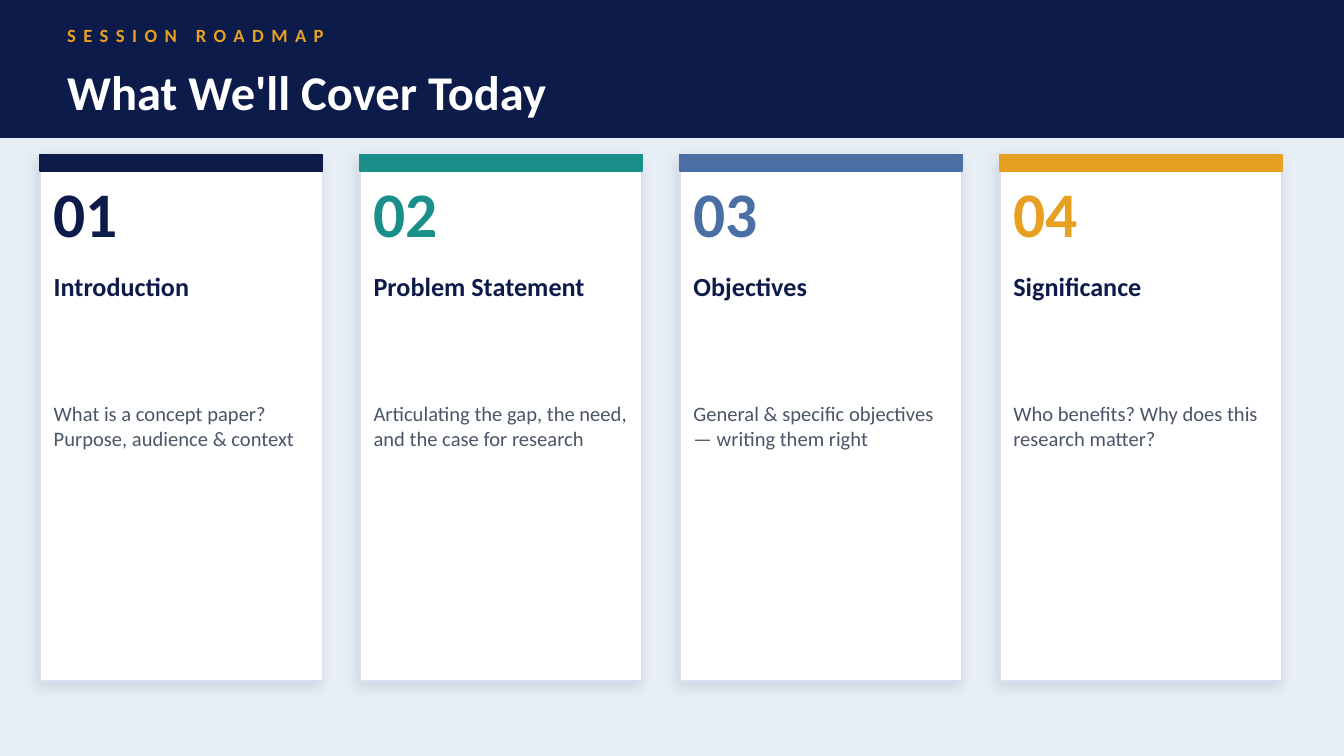
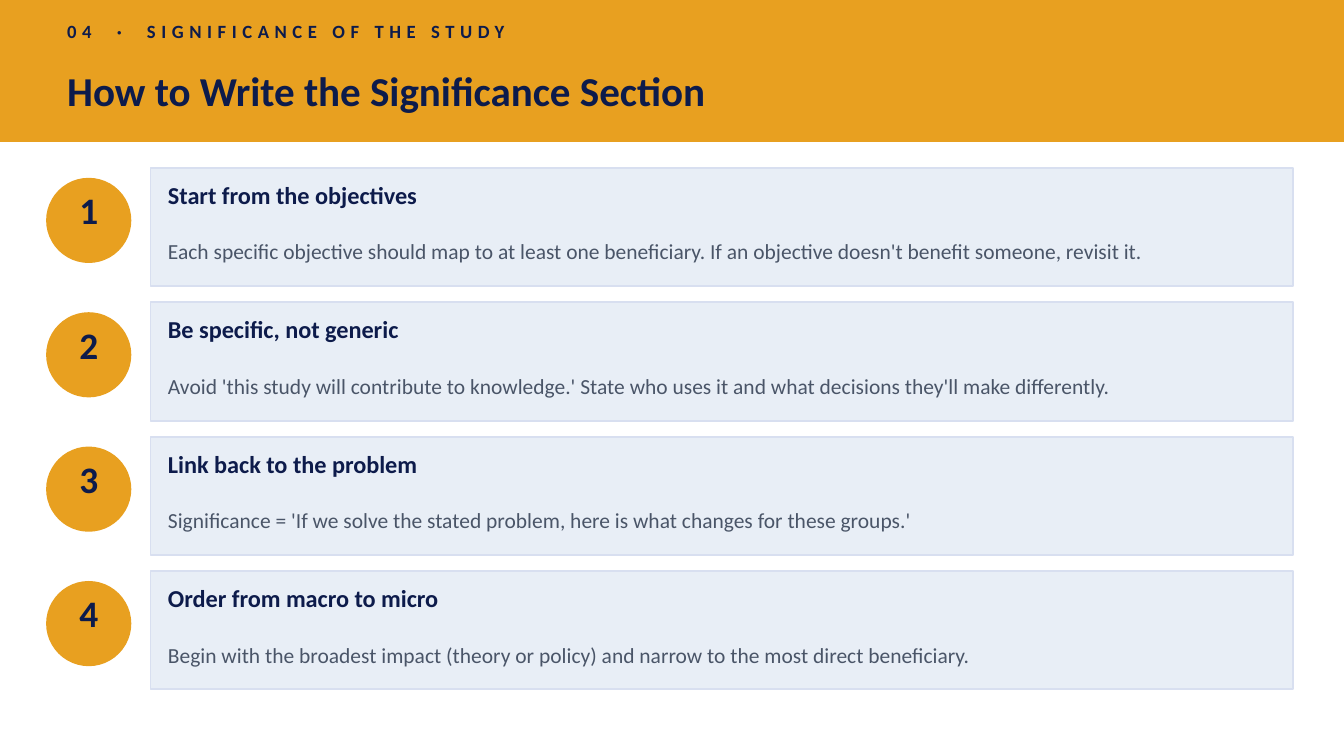
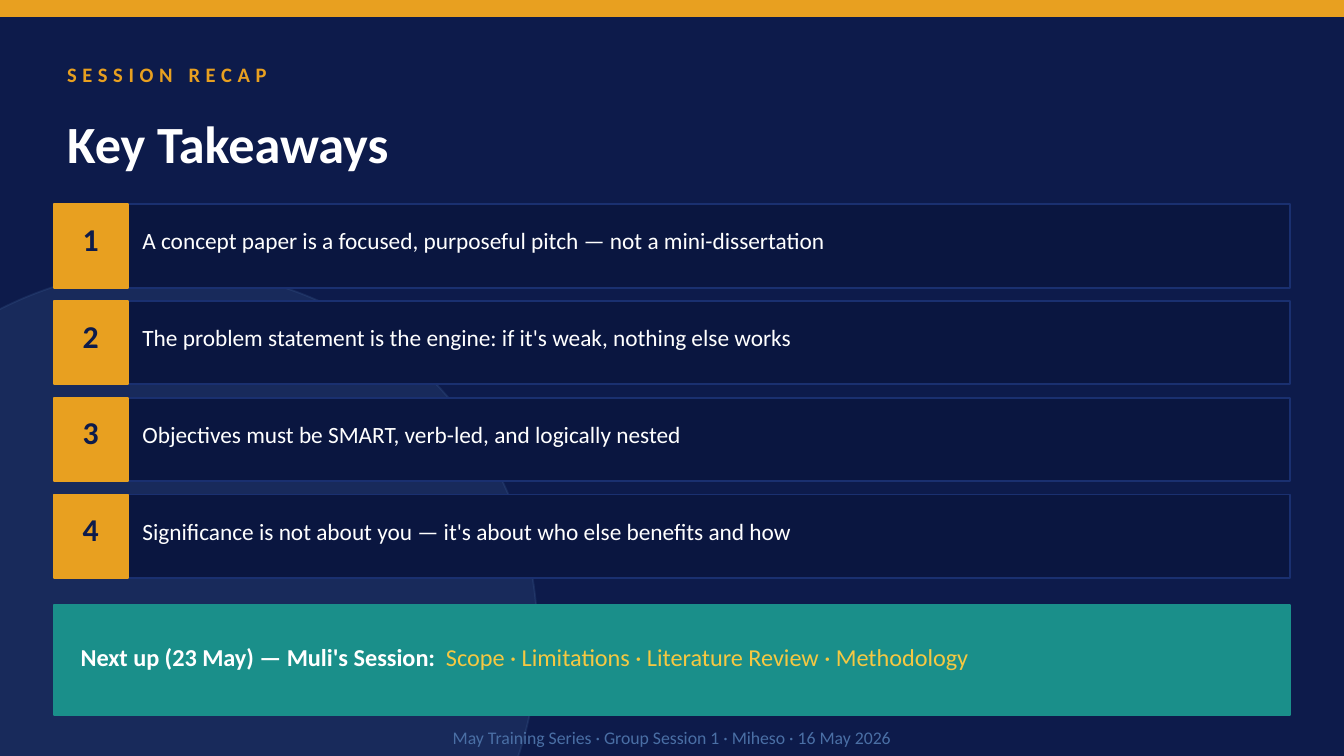
import pptx
import pptx.util
import pptx.dml.color
import pptx.enum.shapes
import pptx.enum.text
import pptx.oxml
import pptx.oxml.ns
import lxml.etree

RGB = pptx.dml.color.RGBColor
RECT = pptx.enum.shapes.MSO_SHAPE.RECTANGLE
OVAL = pptx.enum.shapes.MSO_SHAPE.OVAL
LEFT = pptx.enum.text.PP_ALIGN.LEFT
MID = pptx.enum.text.PP_ALIGN.CENTER

# Shared look
NAVY = RGB(0x0D, 0x1B, 0x4B)
DEEP = RGB(0x0A, 0x16, 0x40)
ROYAL = RGB(0x1A, 0x30, 0x70)
BLUE = RGB(0x4A, 0x6F, 0xA5)
TEAL = RGB(0x1A, 0x8F, 0x8A)
GOLD = RGB(0xE8, 0xA0, 0x20)
LEMON = RGB(0xF5, 0xC8, 0x42)
PALE = RGB(0xE8, 0xEE, 0xF6)
EDGE = RGB(0xD8, 0xDF, 0xF0)
GRAY = RGB(0x4A, 0x55, 0x68)
WHITE = RGB(0xFF, 0xFF, 0xFF)
FONT = "Calibri"
SCALE = 9144  # EMU per px, 100 px to the inch
WIDE = 1000

# Content
TOPICS = [
    ("Introduction", "What is a concept paper? Purpose, audience & context", NAVY),
    ("Problem Statement",
     "Articulating the gap, the need, and the case for research", TEAL),
    ("Objectives", "General & specific objectives — writing them right", BLUE),
    ("Significance", "Who benefits? Why does this research matter?", GOLD),
]
STEPS = [
    ("Start from the objectives",
     "Each specific objective should map to at least one beneficiary. "
     "If an objective doesn't benefit someone, revisit it."),
    ("Be specific, not generic",
     "Avoid 'this study will contribute to knowledge.' "
     "State who uses it and what decisions they'll make differently."),
    ("Link back to the problem",
     "Significance = 'If we solve the stated problem, "
     "here is what changes for these groups.'"),
    ("Order from macro to micro",
     "Begin with the broadest impact (theory or policy) "
     "and narrow to the most direct beneficiary."),
]
POINTS = [
    "A concept paper is a focused, purposeful pitch — not a mini-dissertation",
    "The problem statement is the engine: if it's weak, nothing else works",
    "Objectives must be SMART, verb-led, and logically nested",
    "Significance is not about you — it's about who else benefits and how",
]


def px(*nums):
    return [pptx.util.Emu(num * SCALE) for num in nums]


# Text
def write(shape, text, size, color, bold=False, align=LEFT, space=0):
    """Fill a shape with one paragraph; text is a string or (text, color, bold) runs."""
    frame = shape.text_frame
    frame.word_wrap = True
    frame.auto_size = pptx.enum.text.MSO_AUTO_SIZE.NONE
    frame.vertical_anchor = pptx.enum.text.MSO_ANCHOR.MIDDLE
    frame.margin_left = frame.margin_top = 0
    frame.margin_right = frame.margin_bottom = 0
    para = frame.paragraphs[0]
    para.alignment = align
    runs = [(text, color, bold)] if isinstance(text, str) else text
    for words, tint, heavy in runs:
        run = para.add_run()
        run.text = words
        run.font.name = FONT
        run.font.size = pptx.util.Pt(size)
        run.font.bold = heavy
        run.font.color.rgb = tint
        if space:
            run.font._element.set("spc", str(space * 100))


def label(slide, x, y, w, h, text, **form):
    write(slide.shapes.add_textbox(*px(x, y, w, h)), text, **form)


def title(slide, x, y, w, h, text, **form):
    head = slide.shapes.title
    head.left, head.top, head.width, head.height = px(x, y, w, h)
    write(head, text, bold=True, **form)
    # Bring the title in front of the band
    head.element.getparent().append(head.element)


# Shapes
def block(slide, x, y, w, h, fill, line=None, kind=RECT):
    shape = slide.shapes.add_shape(kind, *px(x, y, w, h))
    shape.shadow.inherit = False
    shape.fill.solid()
    shape.fill.fore_color.rgb = fill
    shape.line.color.rgb = line or fill
    shape.line.width = pptx.util.Pt(1)
    return shape


def fade(shape, part):
    """Set the opacity, in percent, of fill and line."""
    tag = pptx.oxml.ns.qn("a:alpha")
    for tint in list(shape.element.spPr.iter(pptx.oxml.ns.qn("a:srgbClr"))):
        lxml.etree.SubElement(tint, tag).set("val", str(part * 1000))


def shade(shape):
    """Add a soft outer shadow."""
    blur, dist = pptx.util.Pt(8), pptx.util.Pt(3)
    shape.element.spPr.find(pptx.oxml.ns.qn("a:effectLst")).append(
        pptx.oxml.parse_xml(
            f'<a:outerShdw {pptx.oxml.ns.nsdecls("a")} blurRad="{blur}" '
            f'dist="{dist}" dir="8100000" algn="bl" rotWithShape="0">'
            '<a:srgbClr val="000000"><a:alpha val="10000"/></a:srgbClr>'
            '</a:outerShdw>'))


# Elements
def start(deck, back):
    slide = deck.slides.add_slide(deck.slide_layouts.get_by_name("Title Only"))
    slide.background.fill.solid()
    slide.background.fill.fore_color.rgb = back
    return slide


def card(slide, x, num, name, note, color):
    shade(block(slide, x, 115, 210, 392, WHITE, EDGE))
    block(slide, x, 115, 210, 12, color)
    left = x + 10
    label(slide, left, 130, 150, 55, f"{num:02}", size=34, color=color, bold=True)
    label(slide, left, 192, 190, 42, name, size=14, color=NAVY, bold=True)
    label(slide, left, 242, 190, 150, note, size=11, color=GRAY)


def step(slide, y, num, name, note):
    block(slide, 35, y + 8, 62, 62, GOLD, kind=OVAL)
    label(slide, 35, y + 10, 62, 42, str(num), size=20, color=NAVY,
          bold=True, align=MID)
    block(slide, 112, y, 850, 88, PALE, EDGE)
    label(slide, 125, y + 5, 820, 30, name, size=13, color=NAVY, bold=True)
    label(slide, 125, y + 40, 820, 44, note, size=11.5, color=GRAY)


def point(slide, y, num, text):
    block(slide, 40, y, 920, 62, DEEP, ROYAL)
    block(slide, 40, y, 55, 62, GOLD)
    label(slide, 40, y + 8, 55, 35, str(num), size=17, color=NAVY,
          bold=True, align=MID)
    label(slide, 106, y + 8, 820, 38, text, size=12.5, color=WHITE)


# Slides
def roadmap(deck):
    slide = start(deck, PALE)
    block(slide, 0, 0, WIDE, 102, NAVY)
    label(slide, 50, 10, 900, 32, "SESSION ROADMAP", size=10, color=GOLD,
          bold=True, space=4)
    title(slide, 50, 46, 900, 44, "What We'll Cover Today", size=26, color=WHITE)
    for i, topic in enumerate(TOPICS):
        card(slide, 30 + 238 * i, i + 1, *topic)


def method(deck):
    slide = start(deck, WHITE)
    block(slide, 0, 0, WIDE, 105, GOLD)
    label(slide, 50, 8, 900, 30, "04  ·  SIGNIFICANCE OF THE STUDY", size=10,
          color=NAVY, bold=True, space=3)
    title(slide, 50, 42, 900, 50, "How to Write the Significance Section",
          size=22, color=NAVY)
    for i, (name, note) in enumerate(STEPS):
        step(slide, 125 + 100 * i, i + 1, name, note)


def recap(deck):
    slide = start(deck, NAVY)
    block(slide, 0, 0, WIDE, 12, GOLD)
    fade(block(slide, -150, 200, 550, 550, BLUE, kind=OVAL), 18)
    label(slide, 50, 38, 900, 35, "SESSION RECAP", size=11, color=GOLD,
          bold=True, space=3)
    title(slide, 50, 80, 800, 52, "Key Takeaways", size=28, color=WHITE)
    for i, text in enumerate(POINTS):
        point(slide, 152 + 72 * i, i + 1, text)
    # Next session and footer
    block(slide, 40, 450, 920, 82, TEAL)
    label(slide, 60, 458, 880, 62, [
        ("Next up (23 May) — Muli's Session:  ", WHITE, True),
        ("Scope · Limitations · Literature Review · Methodology", LEMON, False),
    ], size=13, color=WHITE)
    label(slide, 0, 538, WIDE, 22,
          "May Training Series · Group Session 1 · Miheso · 16 May 2026",
          size=9.5, color=BLUE, align=MID)


def main():
    deck = pptx.Presentation()
    # Widescreen, 16 to 9
    deck.slide_width = pptx.util.Emu(WIDE * SCALE)
    deck.slide_height = pptx.util.Emu(WIDE * SCALE * 9 // 16)
    roadmap(deck)
    method(deck)
    recap(deck)
    deck.save("out.pptx")


if __name__ == "__main__":
    main()
